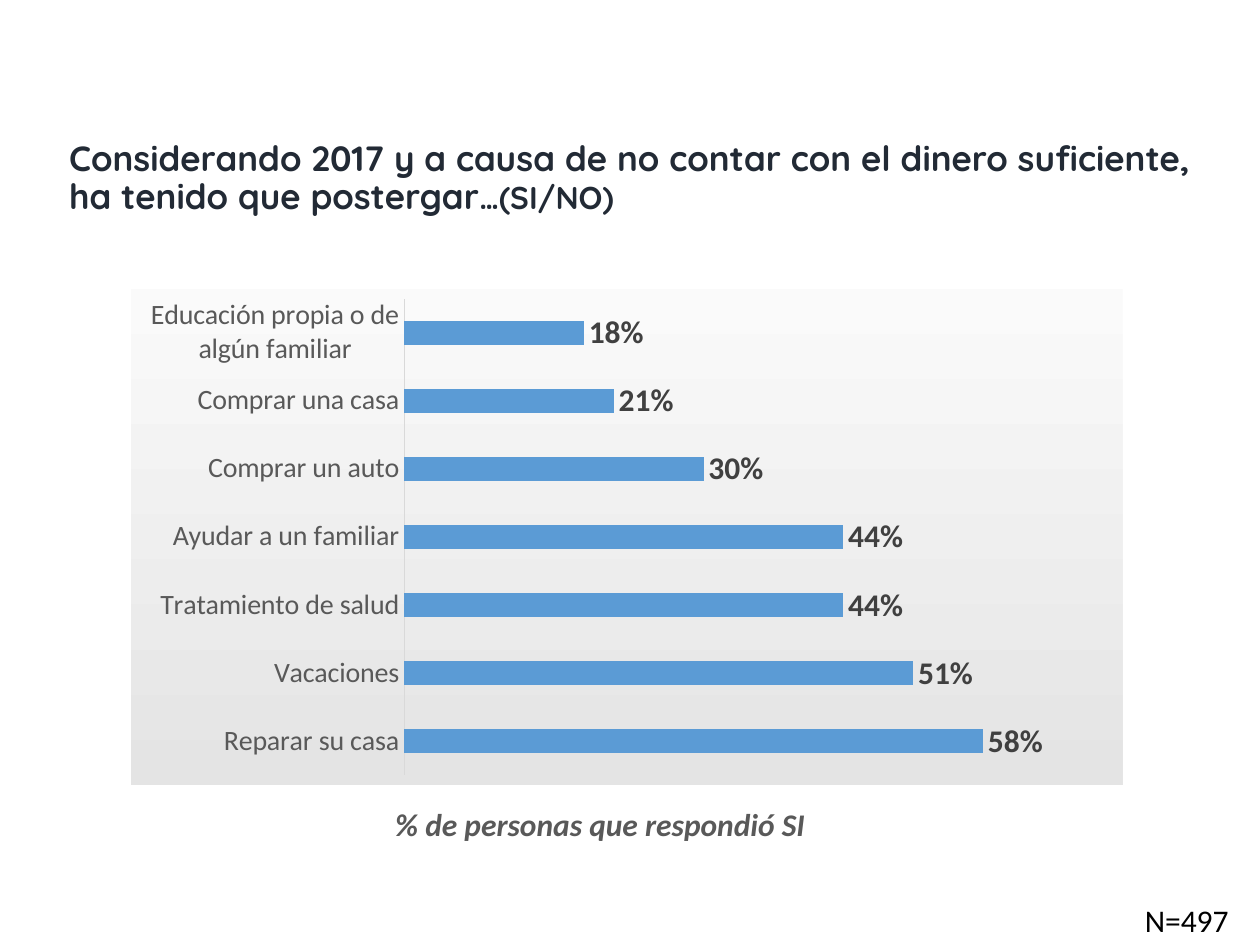
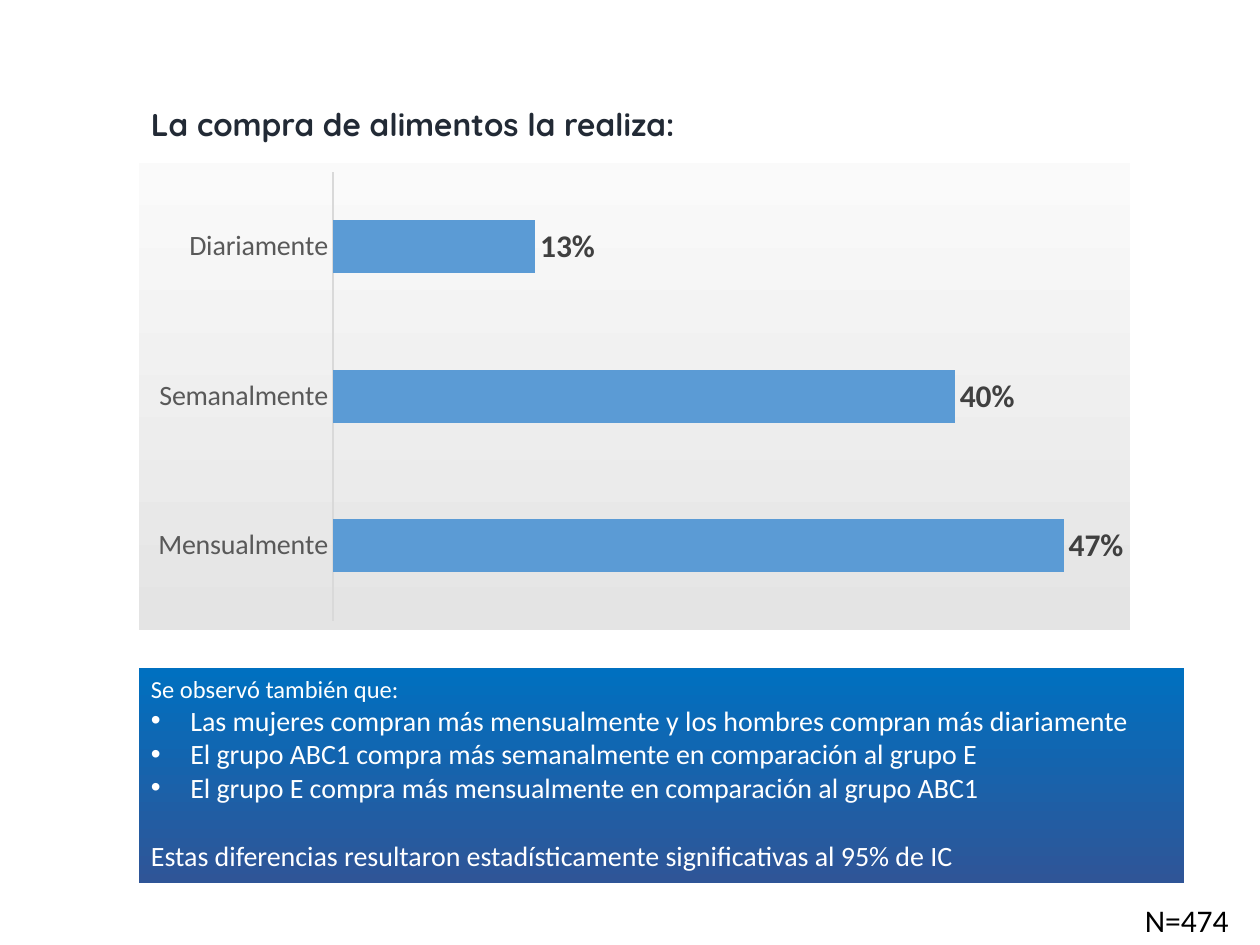
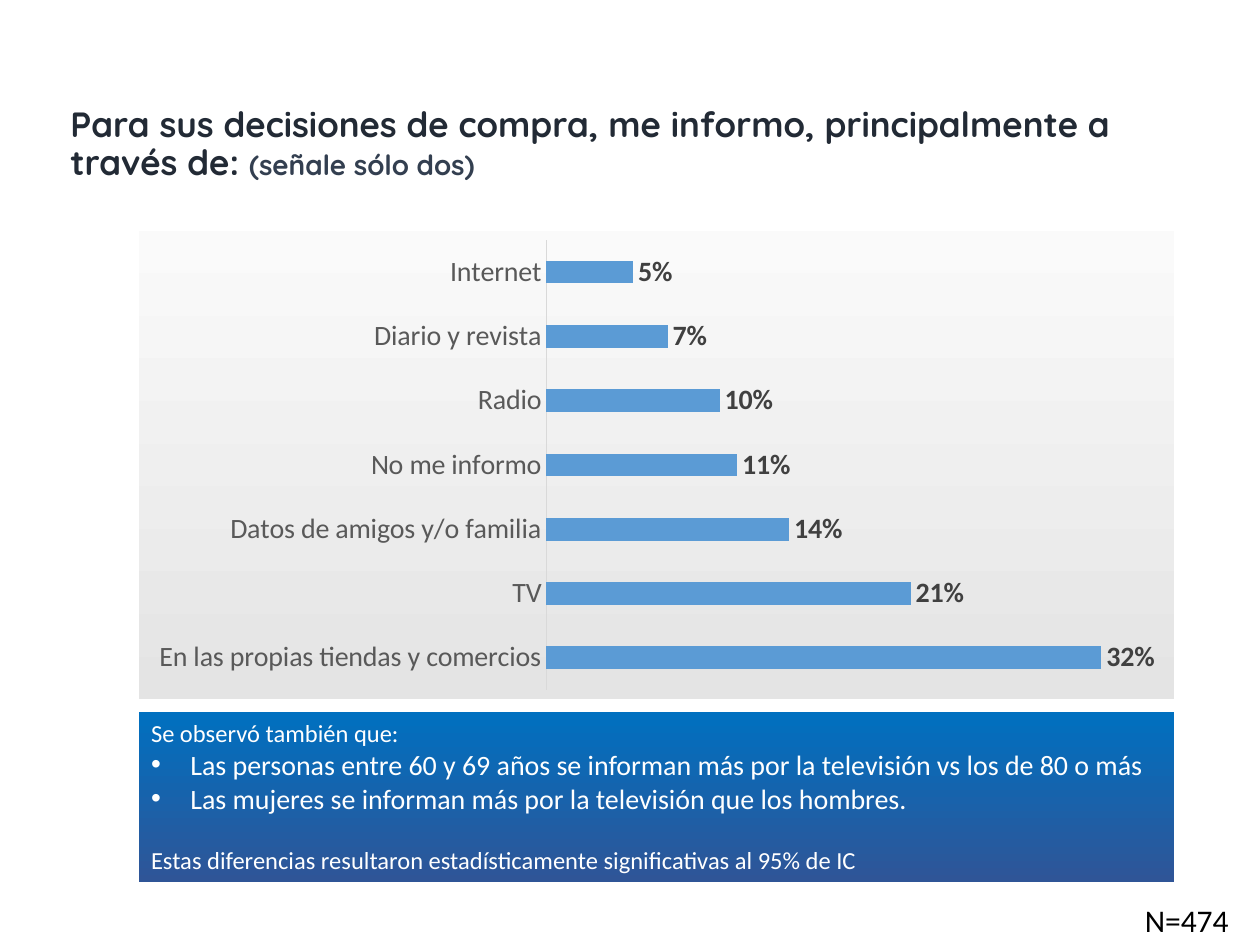
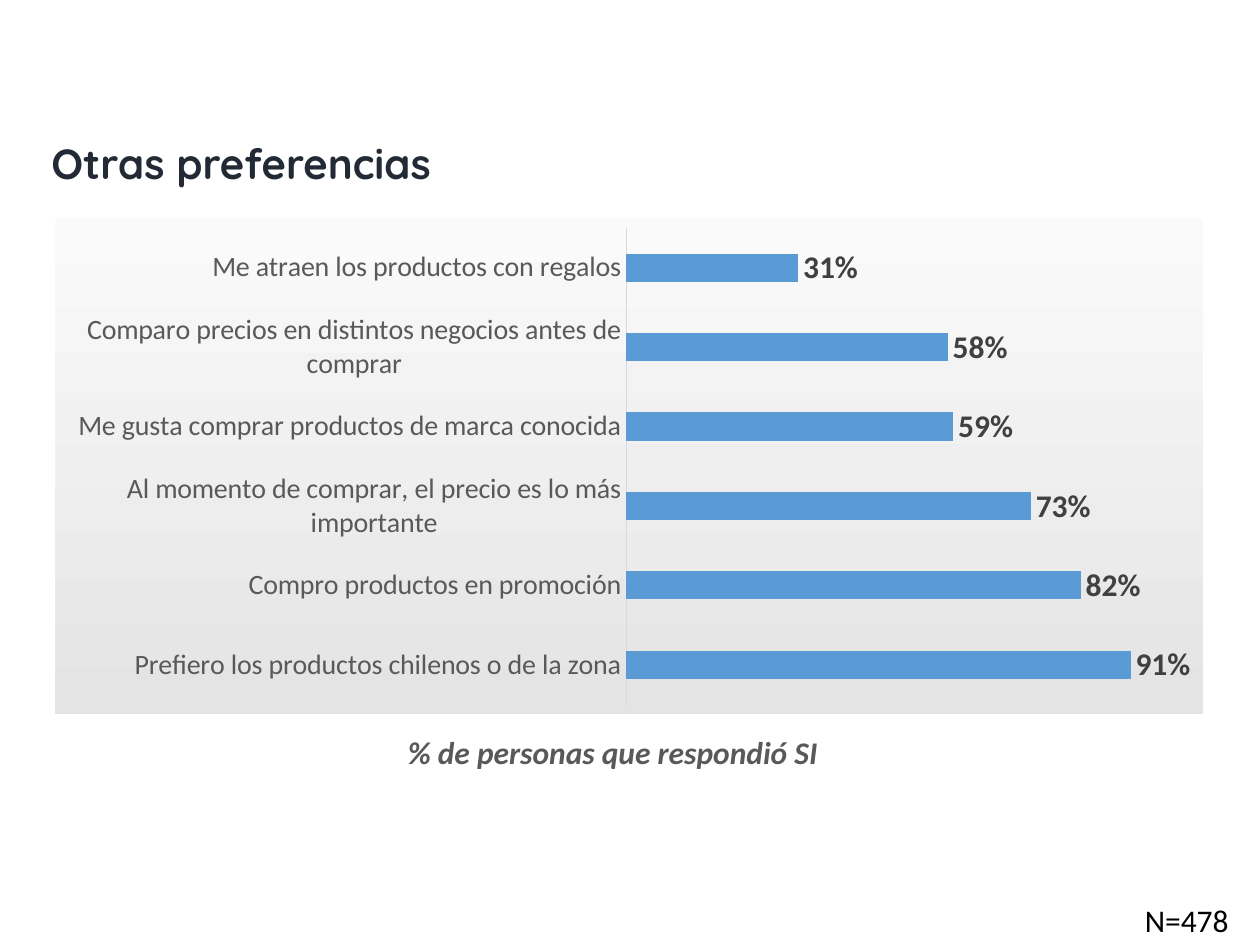
import pptx
import pptx.chart.data
import pptx.dml.color
import pptx.dml.fill
import pptx.enum.chart
import pptx.enum.shapes
import pptx.enum.text
import pptx.oxml
import pptx.oxml.ns
import pptx.util

Pt = pptx.util.Pt
ALIGN = pptx.enum.text.PP_ALIGN
ANCHOR = pptx.enum.text.MSO_ANCHOR

HUES = {
    "title": "222A35", "hint": "333F50", "ink": "000000", "white": "FFFFFF",
    "gray": "595959", "label": "404040", "axis": "D9D9D9", "bar": "5B9BD5",
    "pale": "FAFAFA", "dim": "E4E4E4", "sky": "0070C0", "navy": "2F5597",
}
BODY, HEAD = "Calibri", "Quicksand"
SHARE = "% de personas que respondió SI"
INTRO = "Se observó también que:"
CLOSE = "Estas diferencias resultaron estadísticamente significativas al 95% de IC"
LEFT = 79.2


def tint(name):
    return pptx.dml.color.RGBColor.from_string(HUES[name])


def style(font, size, hue, face=BODY, bold=False, ital=False):
    font.size, font.name = Pt(size), face
    font.bold, font.italic = bold, ital
    font.color.rgb = tint(hue)


def write(para, text, **form):
    run = para.add_run()
    run.text = text
    style(run.font, **form)


def shade(fill, top, base):
    """Fill with a gradient that runs downward."""
    fill.gradient()
    fill.gradient_angle = 270
    for stop, hue, place in zip(fill.gradient_stops, (top, base), (0, 1)):
        stop.color.rgb = tint(hue)
        stop.position = place


def add_box(slide, place, align=ALIGN.LEFT, anchor=ANCHOR.TOP):
    """Add a text box and return its first paragraph."""
    frame = slide.shapes.add_textbox(*map(Pt, place)).text_frame
    frame.word_wrap = True
    frame.vertical_anchor = anchor
    para = frame.paragraphs[0]
    para.alignment = align
    return para


def add_title(slide, place, text, size, tail="", small=16, hue="title"):
    """Add a title; small and hue format the tail."""
    para = add_box(slide, place, anchor=ANCHOR.MIDDLE)
    para.line_spacing = 0.9
    write(para, text, size=size, hue="title", face=HEAD, bold=True)
    if tail:
        write(para, tail, size=small, hue=hue, face=HEAD, bold=True)


def add_count(slide, count):
    para = add_box(slide, (595.4, 511.2, 113.8, 28.8), ALIGN.RIGHT)
    write(para, f"N={count}", size=18, hue="ink")


def add_caption(slide, left, top):
    para = add_box(slide, (left, top, 411, 28.8), ALIGN.CENTER)
    write(para, SHARE, size=18, hue="gray", bold=True, ital=True)


def add_bars(slide, place, rows, size=18):
    """Add a bar chart; rows run from the lowest bar up, in percent."""
    enum = pptx.enum.chart
    data = pptx.chart.data.CategoryChartData(number_format="0%")
    data.categories = [name for name, _ in rows]
    data.add_series("Series 1", [share / 100 for _, share in rows])
    chart = slide.shapes.add_chart(
        enum.XL_CHART_TYPE.BAR_CLUSTERED, *map(Pt, place), data).chart
    chart.has_title = chart.has_legend = False
    style(chart.font, 16, "ink")

    names = chart.category_axis
    names.major_tick_mark = names.minor_tick_mark = enum.XL_TICK_MARK.NONE
    names.format.line.color.rgb = tint("axis")
    names.format.line.width = Pt(0.75)
    style(names.tick_labels.font, 16, "gray")
    scale = chart.value_axis
    scale.visible = scale.has_major_gridlines = False
    scale.minimum_scale = 0

    plot = chart.plots[0]
    plot.gap_width = 182
    plot.vary_by_categories = False
    bars = plot.series[0].format.fill
    bars.solid()
    bars.fore_color.rgb = tint("bar")
    plot.has_data_labels = True
    labels = plot.data_labels
    labels.show_value = True
    labels.number_format, labels.number_format_is_linked = "0%", False
    labels.position = enum.XL_LABEL_POSITION.OUTSIDE_END
    style(labels.font, size, "label", bold=True)
    shade_chart(chart)


def shade_chart(chart):
    space = pptx.oxml.ns.nsdecls("c", "a")
    props = pptx.oxml.parse_xml(
        f"<c:spPr {space}><a:ln><a:noFill/></a:ln></c:spPr>")
    chart.element.find(pptx.oxml.ns.qn("c:chart")).addnext(props)
    shade(pptx.dml.fill.FillFormat.from_fill_parent(props), "pale", "dim")


def add_bullet(para):
    props = para._p.get_or_add_pPr()
    props.set("marL", str(Pt(22.5)))
    props.set("indent", str(-Pt(22.5)))
    space = pptx.oxml.ns.nsdecls("a")
    for tag, mark in (("buFont", 'typeface="Arial"'), ("buChar", 'char="•"')):
        props.append(pptx.oxml.parse_xml(f"<a:{tag} {space} {mark}/>"))


def add_notes(slide, place, points, size):
    """Add the blue panel; size is that of the closing line."""
    panel = slide.shapes.add_shape(
        pptx.enum.shapes.MSO_SHAPE.RECTANGLE, *map(Pt, place))
    panel.shadow.inherit = False
    panel.line.fill.background()
    shade(panel.fill, "sky", "navy")
    frame = panel.text_frame
    frame.word_wrap = True
    frame.vertical_anchor = ANCHOR.TOP
    write(frame.paragraphs[0], INTRO, size=14, hue="white")
    for point in points:
        para = frame.add_paragraph()
        add_bullet(para)
        write(para, point, size=16, hue="white")
    last = frame.add_paragraph()
    last.space_before = Pt(round(size * 1.22, 1))
    write(last, CLOSE, size=size, hue="white")
    for para in frame.paragraphs:
        para.alignment = ALIGN.LEFT


def add_slide(deck, count):
    slide = deck.slides.add_slide(deck.slide_layouts[6])
    add_count(slide, count)
    return slide


def show_delays(deck):
    slide = add_slide(deck, 497)
    add_title(slide, (32.4, 67.7, 656, 69.1),
              "Considerando 2017 y a causa de no contar con el dinero "
              "suficiente, ha tenido que postergar", 20,
              "…(SI/NO)", small=18)
    add_bars(slide, (74.9, 164.9, 566.6, 283.7), [
        ("Reparar su casa", 58),
        ("Vacaciones", 51),
        ("Tratamiento de salud", 44),
        ("Ayudar a un familiar", 44),
        ("Comprar un auto", 30),
        ("Comprar una casa", 21),
        ("Educación propia o de algún familiar", 18),
    ])
    add_caption(slide, 137.5, 456.5)


def show_food(deck):
    slide = add_slide(deck, 474)
    add_title(slide, (LEFT, 56.9, 441.4, 30.2),
              "La compra de alimentos la realiza:", 18)
    add_bars(slide, (LEFT, 92.9, 566.6, 267.1), [
        ("Mensualmente", 47),
        ("Semanalmente", 40),
        ("Diariamente", 13),
    ])
    add_notes(slide, (LEFT, 381.6, 597.6, 123.1), [
        "Las mujeres compran más mensualmente y los hombres compran más diariamente",
        "El grupo ABC1 compra más semanalmente en comparación al grupo E",
        "El grupo E compra más mensualmente en comparación al grupo ABC1",
    ], 16)


def show_media(deck):
    slide = add_slide(deck, 474)
    add_title(slide, (33.1, 33.8, 661, 98.6),
              "Para sus decisiones de compra, me informo, principalmente a "
              "través de: ", 20, "(señale sólo dos)", hue="hint")
    add_bars(slide, (LEFT, 131.8, 591.8, 267.8), [
        ("En las propias tiendas y comercios", 32),
        ("TV", 21),
        ("Datos de amigos y/o familia", 14),
        ("No me informo", 11),
        ("Radio", 10),
        ("Diario y revista", 7),
        ("Internet", 5),
    ], size=16)
    add_notes(slide, (LEFT, 406.8, 591.8, 97.2), [
        "Las personas entre 60 y 69 años se informan más por la televisión "
        "vs los de 80 o más",
        "Las mujeres se informan más por la televisión que los hombres.",
    ], 14)


def show_tastes(deck):
    slide = add_slide(deck, 478)
    add_title(slide, (22.3, 73.4, 656, 42.5), "Otras preferencias", 24)
    add_bars(slide, (31.7, 124.6, 656, 283.7), [
        ("Prefiero los productos chilenos o de la zona", 91),
        ("Compro productos en promoción", 82),
        ("Al momento de comprar, el precio es lo más importante", 73),
        ("Me gusta comprar productos de marca conocida", 59),
        ("Comparo precios en distintos negocios antes de comprar", 58),
        ("Me atraen los productos con regalos", 31),
    ])
    add_caption(slide, 144.7, 415.4)


def main():
    deck = pptx.Presentation()
    deck.slide_width, deck.slide_height = Pt(720), Pt(540)
    for show in (show_delays, show_food, show_media, show_tastes):
        show(deck)
    deck.save("out.pptx")


if __name__ == "__main__":
    main()
